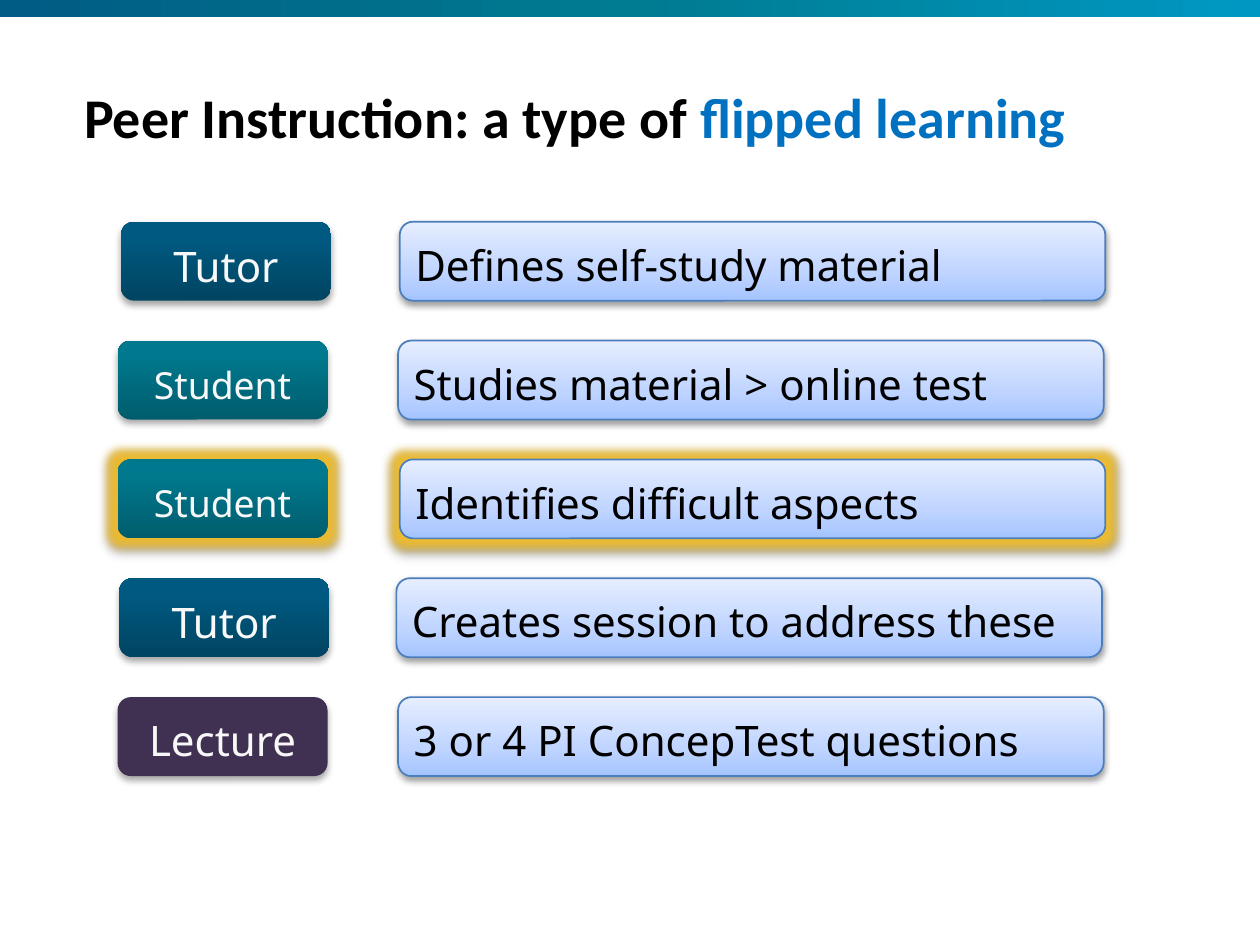
import pptx
import pptx.util
import pptx.dml.color
import pptx.enum.shapes
import pptx.enum.text
import pptx.oxml.ns
import lxml.etree

Inches = pptx.util.Inches
Pt = pptx.util.Pt
qn = pptx.oxml.ns.qn
RGBColor = pptx.dml.color.RGBColor
MSO_SHAPE = pptx.enum.shapes.MSO_SHAPE
PP_ALIGN = pptx.enum.text.PP_ALIGN
MSO_ANCHOR = pptx.enum.text.MSO_ANCHOR

COLORS = {
    "black": "000000",
    "light": "F8F8F8",
    "accent": "0070C0",
    "outline": "4B7EBC",
    "lecture": "403152",
    "glow": "EBBB33",
}
GRADIENTS = {
    "bar": [(0, "005C84"), (51, "007C92"), (100, "0098C3")],
    "Tutor": [(0, "004562"), (80, "005980"), (100, "005A80")],
    "Student": [(0, "005D6D"), (80, "00788D"), (100, "00798E")],
    "step": [(0, "A4C4FF"), (35, "BFD4FF"), (100, "E6EEFF")],
}


def fill_gradient(shape, stops, angle):
    shape.fill.gradient()
    shape.fill.gradient_angle = angle
    stop_list = shape._element.spPr.find(qn("a:gradFill")).find(qn("a:gsLst"))
    for stop in list(stop_list):
        stop_list.remove(stop)
    for position, color in stops:
        stop = lxml.etree.SubElement(stop_list, qn("a:gs"), pos=str(position * 1000))
        lxml.etree.SubElement(stop, qn("a:srgbClr"), val=color)


def add_effect(shape, tag, color, opacity, **settings):
    effects = shape._element.spPr.find(qn("a:effectLst"))
    effect = lxml.etree.SubElement(effects, qn(tag), **settings)
    effect_color = lxml.etree.SubElement(effect, qn("a:srgbClr"), val=color)
    lxml.etree.SubElement(effect_color, qn("a:alpha"), val=str(opacity * 1000))


SLIDE_WIDTH = 7.5
presentation = pptx.Presentation()
presentation.slide_width = Inches(SLIDE_WIDTH)
presentation.slide_height = Inches(SLIDE_WIDTH * 3 / 4)
slide = presentation.slides.add_slide(presentation.slide_layouts[5])

bar = slide.shapes.add_shape(MSO_SHAPE.RECTANGLE, 0, 0, Inches(SLIDE_WIDTH), Inches(0.1))
bar.shadow.inherit = False
bar.line.fill.background()
fill_gradient(bar, GRADIENTS["bar"], 0)

title = slide.shapes.title
title.left, title.top = Inches(0.5), Inches(0.49)
title.width, title.height = Inches(6.08), Inches(0.79)
title_frame = title.text_frame
title_frame.auto_size = pptx.enum.text.MSO_AUTO_SIZE.NONE
title_frame.vertical_anchor = MSO_ANCHOR.TOP
title_frame.margin_left = title_frame.margin_right = 0
title_frame.margin_top = title_frame.margin_bottom = 0
title_paragraph = title_frame.paragraphs[0]
title_paragraph.alignment = PP_ALIGN.LEFT
for text, color in [("Peer Instruction: a type of ", "black"), ("flipped learning", "accent")]:
    run = title_paragraph.add_run()
    run.text = text
    run.font.name = "Calibri"
    run.font.size = Pt(24)
    run.font.bold = True
    run.font.color.rgb = RGBColor.from_string(COLORS[color])

FIRST_TOP, LAST_TOP, BOX_HEIGHT = 1.32, 4.15, 0.47
ROLE_WIDTH, STEP_WIDTH = 1.25, 4.2
HIGHLIGHTED_ROW = 2
rows = [
    ("Tutor", 0.72, "Defines self-study material", 2.38),
    ("Student", 0.7, "Studies material > online test", 2.37),
    ("Student", 0.7, "Identifies difficult aspects", 2.38),
    ("Tutor", 0.71, "Creates session to address these", 2.36),
    ("Lecture", 0.7, "3 or 4 PI ConcepTest questions", 2.37),
]
row_pitch = (LAST_TOP - FIRST_TOP) / (len(rows) - 1)

for index, (role, role_left, step, step_left) in enumerate(rows):
    top = FIRST_TOP + index * row_pitch
    for text, left, width, is_role in [
        (role, role_left, ROLE_WIDTH, True),
        (step, step_left, STEP_WIDTH, False),
    ]:
        box = slide.shapes.add_shape(
            MSO_SHAPE.ROUNDED_RECTANGLE,
            Inches(left), Inches(top), Inches(width), Inches(BOX_HEIGHT),
        )
        box.shadow.inherit = False
        if is_role:
            box.line.fill.background()
        else:
            box.line.color.rgb = RGBColor.from_string(COLORS["outline"])
            box.line.width = Pt(0.75)
        if text == "Lecture":
            box.fill.solid()
            box.fill.fore_color.rgb = RGBColor.from_string(COLORS["lecture"])
        else:
            fill_gradient(box, GRADIENTS[role if is_role else "step"], 90)
        if index == HIGHLIGHTED_ROW:
            add_effect(box, "a:glow", COLORS["glow"], 100, rad=str(Pt(8)))
        add_effect(
            box, "a:outerShdw", COLORS["black"], 35 if is_role else 38,
            blurRad=str(Pt(3.1)), dist=str(Pt(1.8 if is_role else 1.6)),
            dir="5400000", rotWithShape="0",
        )

        frame = box.text_frame
        frame.text = text
        frame.word_wrap = True
        frame.vertical_anchor = MSO_ANCHOR.MIDDLE
        frame.margin_left = frame.margin_right = Inches(0.07)
        frame.margin_top = Inches(0.05 if is_role and text != "Lecture" else 0.04)
        frame.margin_bottom = 0
        paragraph = frame.paragraphs[0]
        paragraph.alignment = PP_ALIGN.CENTER if is_role else PP_ALIGN.LEFT
        font = paragraph.runs[0].font
        font.name = "Noto Sans"
        font.size = Pt(16 if text == "Student" else 18)
        font.color.rgb = RGBColor.from_string(COLORS["light" if is_role else "black"])

presentation.save("out.pptx")
